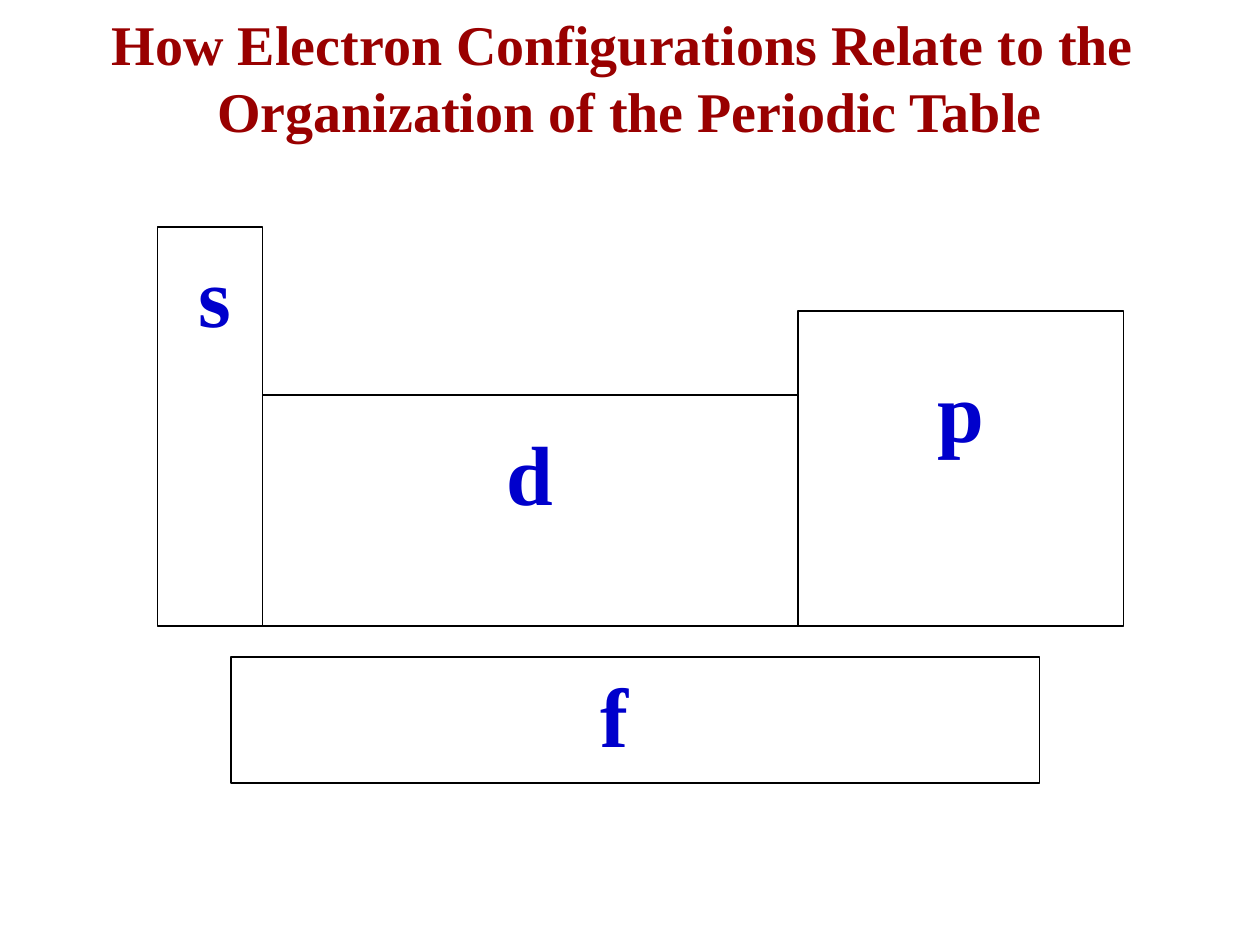
from dataclasses import dataclass

from lxml.etree import SubElement
from pptx import Presentation
from pptx.dml.color import RGBColor
from pptx.enum.shapes import MSO_SHAPE
from pptx.enum.text import MSO_ANCHOR, MSO_AUTO_SIZE, PP_ALIGN
from pptx.oxml.ns import qn
from pptx.util import Inches, Pt


@dataclass(frozen=True)
class Theme:
    font: str = "Times New Roman"
    title_size: int = 32
    label_size: int = 48
    title: RGBColor = RGBColor(0x99, 0x00, 0x00)
    label: RGBColor = RGBColor(0x00, 0x00, 0xCC)
    fill: RGBColor = RGBColor(0xFF, 0xFF, 0xFF)
    line: RGBColor = RGBColor(0x00, 0x00, 0x00)


THEME = Theme()
TITLE_LINES = ["How Electron Configurations Relate to the ",
               "Organization of the Periodic Table"]

# Grid: twelve cells to the inch, counted from the table's top left corner
LEFT, TOP, CELL = 1.25, 1.8, 1 / 12
LABEL_COLS, LABEL_ROWS = 9, 10.8

# Orbital name, block (column, row, columns, rows), label (column, row)
BLOCKS = [
    ("s", (0, 0, 10, 38), (1, 1)),
    ("f", (7, 41, 77, 12), (39, 41)),
    ("p", (61, 8, 31, 30), (72, 12)),
    ("d", (10, 16, 51, 22), (31, 18)),
]


def grid(col, row, cols, rows):
    return (Inches(LEFT + col * CELL), Inches(TOP + row * CELL),
            Inches(cols * CELL), Inches(rows * CELL))


def add_run(p, text, size, color):
    r = p.add_run()
    r.text = text
    r.font.name = THEME.font
    r.font.size = Pt(size)
    r.font.bold = True
    r.font.color.rgb = color


def add_text(s, box, lines, size, color):
    tf = s.shapes.add_textbox(*box).text_frame
    tf.word_wrap = True
    p = tf.paragraphs[0]
    p.alignment = PP_ALIGN.CENTER
    for i, line in enumerate(lines):
        if i:
            p.add_line_break()
        add_run(p, line, size, color)
    return tf


def add_title(s, width):
    box = (0, Inches(0.3), width, Inches(0.62))
    tf = add_text(s, box, TITLE_LINES, THEME.title_size, THEME.title)
    tf.vertical_anchor = MSO_ANCHOR.MIDDLE


def add_block(s, cells):
    sp = s.shapes.add_shape(MSO_SHAPE.RECTANGLE, *grid(*cells))
    sp.shadow.inherit = False
    sp.fill.solid()
    sp.fill.fore_color.rgb = THEME.fill
    sp.line.color.rgb = THEME.line
    sp.line.width = Pt(1)


def add_label(s, name, col, row):
    box = grid(col, row, LABEL_COLS, LABEL_ROWS)
    tf = add_text(s, box, [name], THEME.label_size, THEME.label)
    tf.auto_size = MSO_AUTO_SIZE.SHAPE_TO_FIT_TEXT
    # Space before, as half a line
    before = SubElement(tf.paragraphs[0]._p.get_or_add_pPr(), qn("a:spcBef"))
    SubElement(before, qn("a:spcPct")).set("val", "50000")


def main():
    prs = Presentation()
    prs.slide_width, prs.slide_height = Inches(10), Inches(7.5)
    s = prs.slides.add_slide(prs.slide_layouts[6])

    add_title(s, prs.slide_width)

    # Blocks of the periodic table, then their names on top
    for _, cells, _ in BLOCKS:
        add_block(s, cells)
    for name, _, place in BLOCKS:
        add_label(s, name, *place)

    prs.save("out.pptx")


if __name__ == "__main__":
    main()
